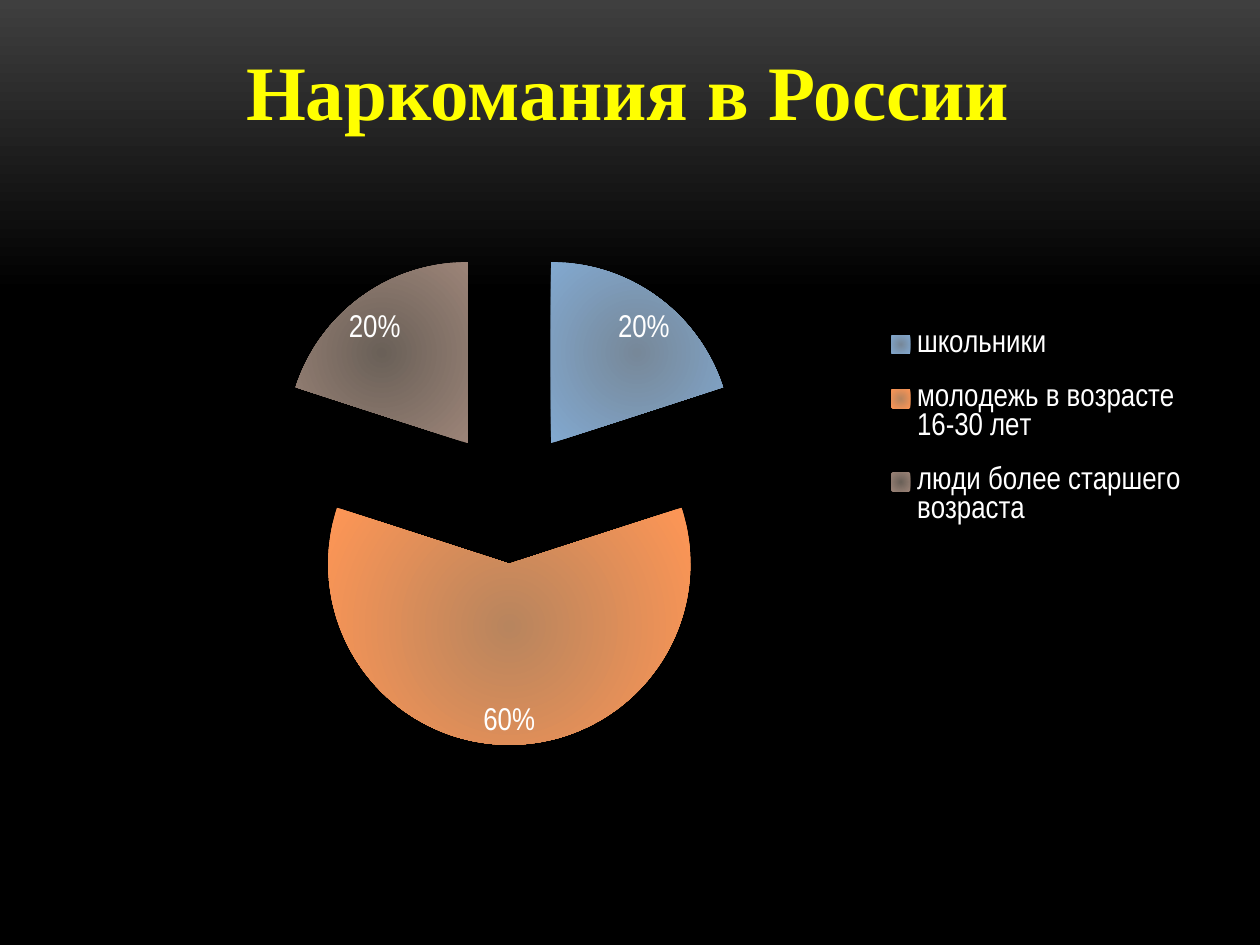
from lxml.etree import SubElement
from pptx import Presentation
from pptx.chart.data import CategoryChartData
from pptx.dml.color import RGBColor
from pptx.enum.chart import XL_CHART_TYPE, XL_LABEL_POSITION, XL_LEGEND_POSITION
from pptx.enum.text import MSO_ANCHOR, PP_ALIGN
from pptx.oxml import parse_xml
from pptx.oxml.ns import nsdecls, qn
from pptx.util import Inches, Pt

# Category, share, explosion, centre colour, edge colour
GROUPS = [
    ("школьники", 20, 39, "778899", "82A9D0"),
    ("молодежь в возрасте 16-30 лет", 60, 35, "B8855E", "FF9655"),
    ("люди более старшего возраста", 20, 39, "6A6058", "9C8478"),
]


def color(code):
    return RGBColor.from_string(code)


def blend(fill, first, last, end=1.0):
    """Fill with a gradient of two colours."""
    fill.gradient()
    stops = fill.gradient_stops
    for stop, code, pos in zip(stops, (first, last), (0, end)):
        stop.color.rgb = color(code)
        stop.position = pos


def style(font, name, size, code):
    font.name = name
    font.size = Pt(size)
    font.color.rgb = color(code)


def add_title(slide, text):
    title = slide.shapes.title
    title.left, title.top = Inches(0), Inches(0.29)
    title.width, title.height = Inches(9.97), Inches(0.84)
    frame = title.text_frame
    frame.text = text
    frame.vertical_anchor = MSO_ANCHOR.MIDDLE
    para = frame.paragraphs[0]
    para.alignment = PP_ALIGN.CENTER
    style(para.font, "Times New Roman", 44, "FFFF00")
    para.font.bold = True
    # Thin red outline round the letters
    props = para.runs[0]._r.get_or_add_rPr()
    props.append(parse_xml(
        f'<a:ln {nsdecls("a")} w="18000"><a:solidFill>'
        '<a:srgbClr val="FF0000"/></a:solidFill></a:ln>'))


def place(part, index, x, y, w, h, inner=False):
    """Fix a chart part, in fractions of the chart."""
    for old in part.findall(qn("c:layout")):
        part.remove(old)
    layout = parse_xml(f'<c:layout {nsdecls("c")}><c:manualLayout/></c:layout>')
    items = [("layoutTarget", "inner")] if inner else []
    items += [("xMode", "edge"), ("yMode", "edge"),
              ("x", x), ("y", y), ("w", w), ("h", h)]
    for tag, val in items:
        SubElement(layout[0], qn(f"c:{tag}")).set("val", str(val))
    part.insert(index, layout)


def paint(series):
    """Give each slice a round gradient and pull the slices apart."""
    for i, (_, _, gap, core, edge) in enumerate(GROUPS):
        blend(series.points[i].format.fill, core, edge)
        point = series._element.findall(qn("c:dPt"))[i]
        point.find(qn("c:spPr")).addprevious(
            parse_xml(f'<c:explosion {nsdecls("c")} val="{gap}"/>'))
    for grad in series._element.iter(qn("a:gradFill")):
        grad.remove(grad.find(qn("a:lin")))
        grad.append(parse_xml(
            f'<a:path {nsdecls("a")} path="circle"><a:fillToRect '
            'l="50000" t="50000" r="50000" b="50000"/></a:path>'))
    first = series._element.find(qn("c:dPt"))
    first.addprevious(parse_xml(f'<c:explosion {nsdecls("c")} val="39"/>'))


def add_pie(slide):
    data = CategoryChartData()
    data.categories = [group[0] for group in GROUPS]
    data.add_series("Series 1", [group[1] for group in GROUPS])
    chart = slide.shapes.add_chart(
        XL_CHART_TYPE.PIE, Inches(0.28), Inches(1.53),
        Inches(9.29), Inches(4.44), data).chart
    style(chart.font, "Arial Narrow", 18, "FFFFFF")
    chart.has_title = False
    place(chart._chartSpace.chart.plotArea, 0, 0, 0.1, 0.81, 0.9, inner=True)

    # Legend at the right
    chart.has_legend = True
    legend = chart.legend
    legend.position = XL_LEGEND_POSITION.RIGHT
    legend.include_in_layout = False
    place(legend._element, 1, 0.72, 0.2, 0.27, 0.44)

    # Slices and percent labels
    pie = chart.plots[0]
    pie.vary_by_categories = True
    paint(pie.series[0])
    pie.has_data_labels = True
    labels = pie.data_labels
    labels.show_percentage = True
    labels.show_value = False
    labels.number_format = "0%"
    labels.number_format_is_linked = False
    labels.position = XL_LABEL_POSITION.BEST_FIT


def main():
    deck = Presentation()
    deck.slide_width, deck.slide_height = Inches(10), Inches(7.5)
    slide = deck.slides.add_slide(deck.slide_layouts[5])

    # Background fades downwards to black
    fill = slide.background.fill
    blend(fill, "3F3F3F", "000000", 0.31)
    fill.gradient_angle = 270

    add_title(slide, "Наркомания в России")
    add_pie(slide)
    deck.save("out.pptx")


if __name__ == "__main__":
    main()
